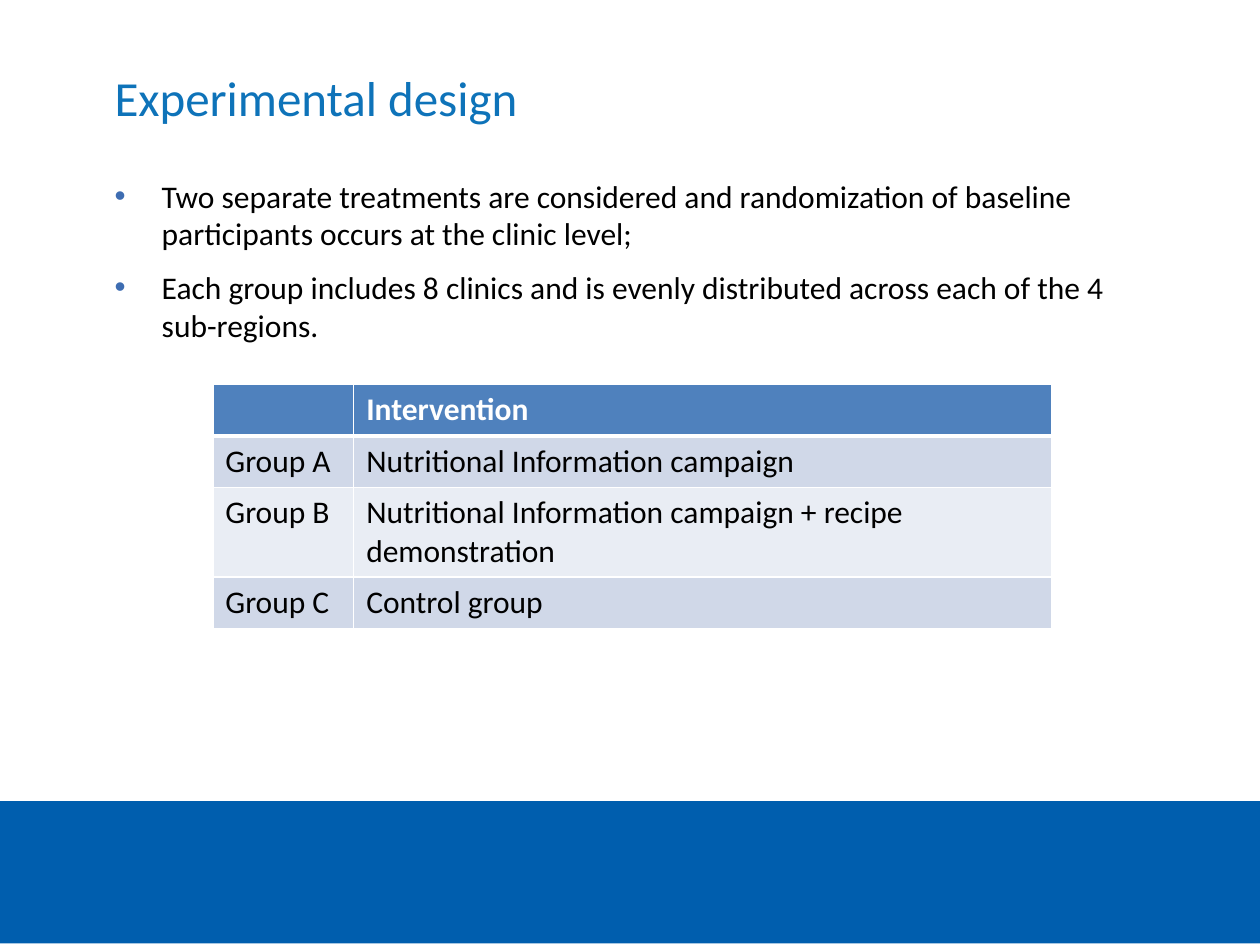
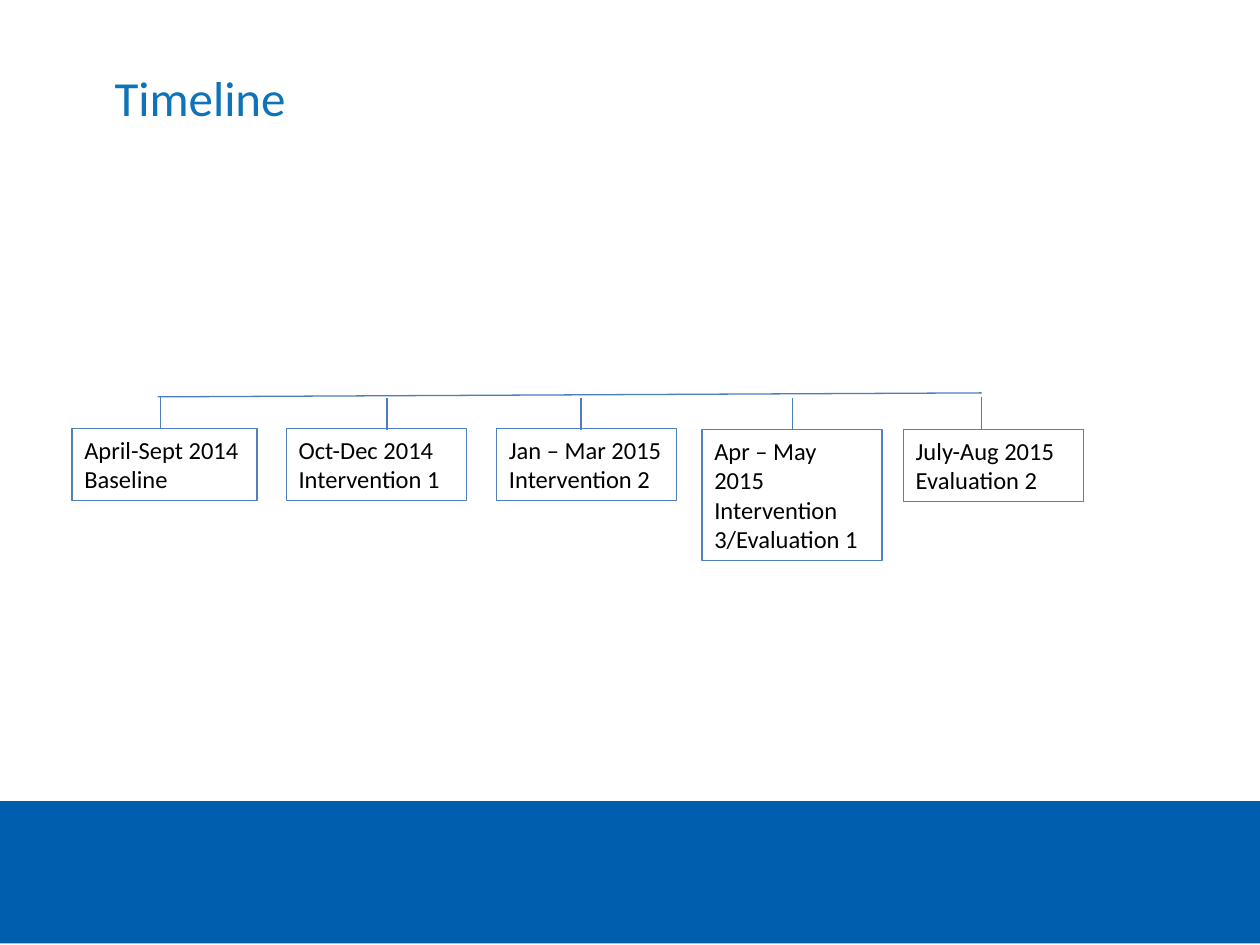
import pptx
import pptx.dml.color
import pptx.enum.shapes
import pptx.enum.text
import pptx.oxml.ns
import pptx.util
from lxml import etree
from pptx.util import Cm

FONT = "Calibri"
COLORS = {
    "band": "005EAE",
    "title": "0E73B9",
    "text": "000000",
    "bullet": "3E6DB2",
    "white": "FFFFFF",
    "header": "4F81BD",
    "odd_row": "D0D8E8",
    "even_row": "E9EDF4",
    "box_line": "4F81BD",
    "connector": "4B7EBC",
}
TITLE_AND_BODY, TITLE_ONLY = 1, 5
LINE_WIDTH = 0.75
BULLET_INDENT = Cm(0.95)

DESIGN_POINTS = [
    "Two separate treatments are considered and randomization of baseline participants occurs at the clinic level;",
    "Each group includes 8 clinics and is evenly distributed across each of the 4 sub-regions.",
]
GROUPS = [
    ("", "Intervention"),
    ("Group A", "Nutritional Information campaign"),
    ("Group B", "Nutritional Information campaign + recipe demonstration"),
    ("Group C", "Control group"),
]
COLUMN_WIDTHS = [2.84, 14.08]
ROW_HEIGHTS = [1.04, 1.04, 1.8, 1.04]

# left, top, width, height, tick position, tick top, lines
MILESTONES = [
    (1.45, 8.64, 3.73, 1.45, 3.23, 8.0, ["April-Sept 2014", "Baseline"]),
    (5.77, 8.64, 3.63, 1.45, 7.8, 8.03, ["Oct-Dec 2014", "Intervention 1"]),
    (10.01, 8.64, 3.63, 1.45, 11.71, 8.03, ["Jan – Mar 2015", "Intervention 2"]),
    (14.15, 8.66, 3.63, 2.64, 15.98, 8.03, ["Apr – May 2015", "Intervention 3/Evaluation 1"]),
    (18.21, 8.66, 3.63, 1.45, 19.79, 8.0, ["July-Aug 2015", "Evaluation 2"]),
]
TICK_LENGTH = 0.64


def rgb(name):
    return pptx.dml.color.RGBColor.from_string(COLORS[name])


def add_element(parent, tag, **attributes):
    return etree.SubElement(parent, pptx.oxml.ns.qn(tag), **attributes)


def add_bullet(paragraph):
    properties = paragraph._p.get_or_add_pPr()
    properties.set("marL", str(BULLET_INDENT))
    properties.set("indent", str(-BULLET_INDENT))
    color = add_element(properties, "a:buClr")
    add_element(color, "a:srgbClr", val=COLORS["bullet"])
    add_element(properties, "a:buFont", typeface="Arial")
    add_element(properties, "a:buChar", char="•")


def write(frame, lines, size=18, color="text", bold=False, bullets=False, space_before=0):
    frame.word_wrap = True
    for index, line in enumerate(lines):
        paragraph = frame.add_paragraph() if index else frame.paragraphs[0]
        if bullets:
            add_bullet(paragraph)
        paragraph.text = line
        paragraph.alignment = pptx.enum.text.PP_ALIGN.LEFT
        paragraph.space_before = pptx.util.Pt(space_before if index else 0)
        paragraph.font.name = FONT
        paragraph.font.size = pptx.util.Pt(size)
        paragraph.font.bold = bold
        paragraph.font.color.rgb = rgb(color)


def place(shape, left, top, width, height):
    shape.left, shape.top = Cm(left), Cm(top)
    shape.width, shape.height = Cm(width), Cm(height)


def fill_placeholder(shape, lines, anchor, **text_format):
    frame = shape.text_frame
    frame.auto_size = pptx.enum.text.MSO_AUTO_SIZE.NONE
    frame.vertical_anchor = anchor
    frame.margin_left = frame.margin_right = frame.margin_top = frame.margin_bottom = 0
    write(frame, lines, **text_format)


def add_rectangle(slide, left, top, width, height):
    shape = slide.shapes.add_shape(
        pptx.enum.shapes.MSO_SHAPE.RECTANGLE, Cm(left), Cm(top), Cm(width), Cm(height))
    shape.shadow.inherit = False
    return shape


def add_slide(presentation, layout, title):
    slide = presentation.slides.add_slide(presentation.slide_layouts[layout])
    band = add_rectangle(slide, 0, 16.15, 25.4, 2.87)
    band.fill.solid()
    band.fill.fore_color.rgb = rgb("band")
    band.line.fill.background()
    place(slide.shapes.title, 2.31, 0.99, 20.83, 1.55)
    fill_placeholder(slide.shapes.title, [title], pptx.enum.text.MSO_ANCHOR.BOTTOM,
                     size=28, color="title")
    return slide


def set_cell_borders(cell, top=1, bottom=1):
    properties = cell._tc.get_or_add_tcPr()
    for side, points in (("L", 1), ("R", 1), ("T", top), ("B", bottom)):
        line = add_element(properties, f"a:ln{side}", w=str(pptx.util.Pt(points)))
        fill = add_element(line, "a:solidFill")
        add_element(fill, "a:srgbClr", val=COLORS["white"])


def add_group_table(slide, left, top):
    table = slide.shapes.add_table(
        len(GROUPS), len(COLUMN_WIDTHS), Cm(left), Cm(top),
        Cm(sum(COLUMN_WIDTHS)), Cm(sum(ROW_HEIGHTS))).table
    for column, width in zip(table.columns, COLUMN_WIDTHS):
        column.width = Cm(width)
    for index, (row, height, texts) in enumerate(zip(table.rows, ROW_HEIGHTS, GROUPS)):
        row.height = Cm(height)
        is_header = index == 0
        fill = "header" if is_header else "odd_row" if index % 2 else "even_row"
        for cell, text in zip(row.cells, texts):
            set_cell_borders(cell, top=3 if index == 1 else 1, bottom=3 if is_header else 1)
            cell.fill.solid()
            cell.fill.fore_color.rgb = rgb(fill)
            write(cell.text_frame, [text], color="white" if is_header else "text", bold=is_header)


def add_line(slide, start_x, start_y, end_x, end_y):
    connector = slide.shapes.add_connector(
        pptx.enum.shapes.MSO_CONNECTOR.STRAIGHT,
        Cm(start_x), Cm(start_y), Cm(end_x), Cm(end_y))
    connector.line.color.rgb = rgb("connector")
    connector.line.width = pptx.util.Pt(LINE_WIDTH)
    add_element(connector._element.spPr, "a:effectLst")


def add_milestone(slide, left, top, width, height, lines):
    box = add_rectangle(slide, left, top, width, height)
    box.fill.background()
    box.line.color.rgb = rgb("box_line")
    box.line.width = pptx.util.Pt(LINE_WIDTH)
    box.text_frame.auto_size = pptx.enum.text.MSO_AUTO_SIZE.SHAPE_TO_FIT_TEXT
    box.text_frame.vertical_anchor = pptx.enum.text.MSO_ANCHOR.TOP
    write(box.text_frame, lines, size=14)


def build_design_slide(presentation):
    slide = add_slide(presentation, TITLE_AND_BODY, "Experimental design")
    body = slide.placeholders[1]
    place(body, 2.31, 3.56, 20.9, 11.81)
    fill_placeholder(body, DESIGN_POINTS, pptx.enum.text.MSO_ANCHOR.TOP,
                     bullets=True, space_before=9)
    add_group_table(slide, 4.29, 7.75)


def build_timeline_slide(presentation):
    slide = add_slide(presentation, TITLE_ONLY, "Timeline")
    add_line(slide, 3.18, 8.0, 19.79, 7.92)
    for left, top, width, height, tick, tick_top, lines in MILESTONES:
        add_milestone(slide, left, top, width, height, lines)
        add_line(slide, tick, tick_top + TICK_LENGTH, tick, tick_top)


def main():
    presentation = pptx.Presentation()
    presentation.slide_width, presentation.slide_height = Cm(25.4), Cm(19.05)
    build_design_slide(presentation)
    build_timeline_slide(presentation)
    presentation.save("out.pptx")


if __name__ == "__main__":
    main()
